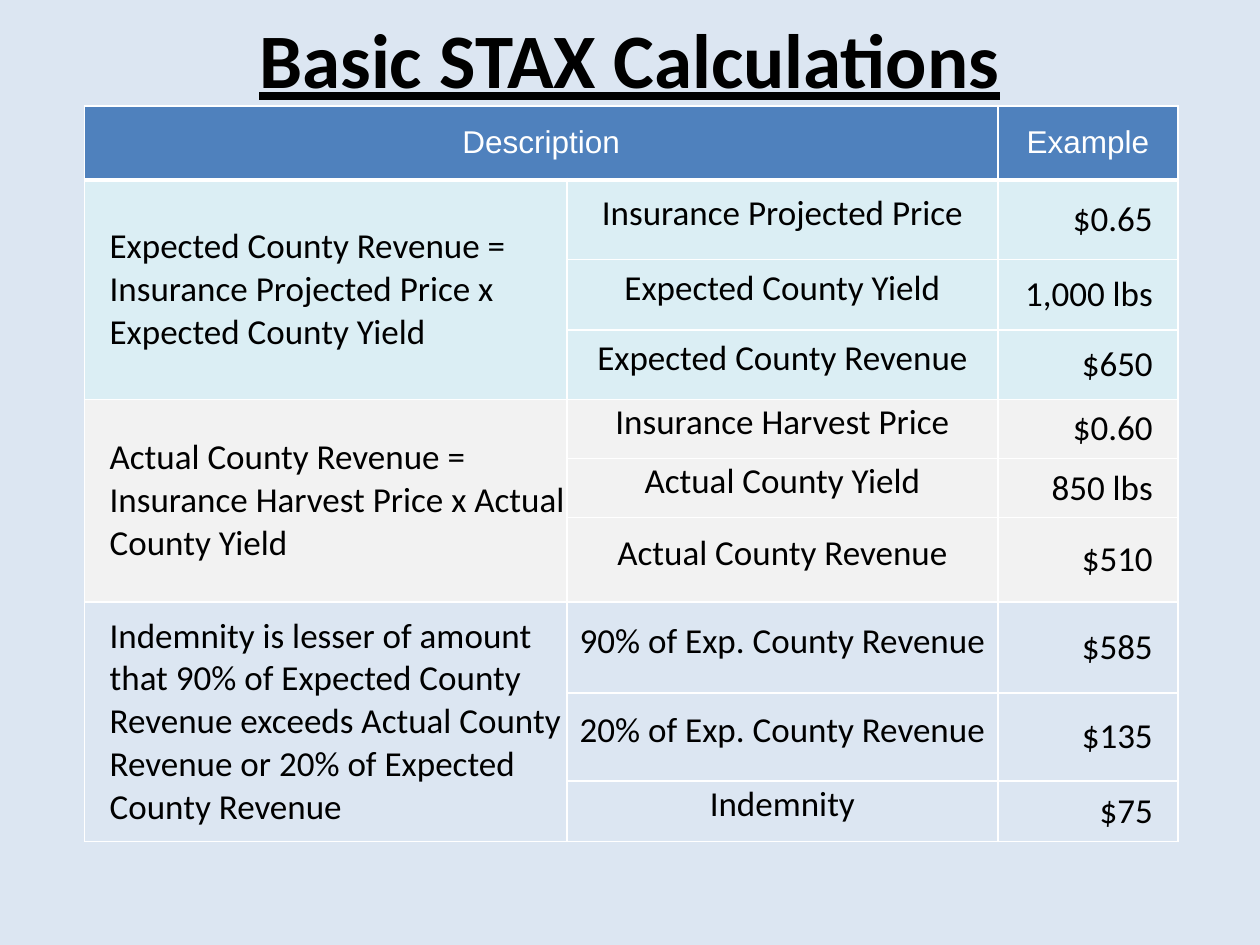
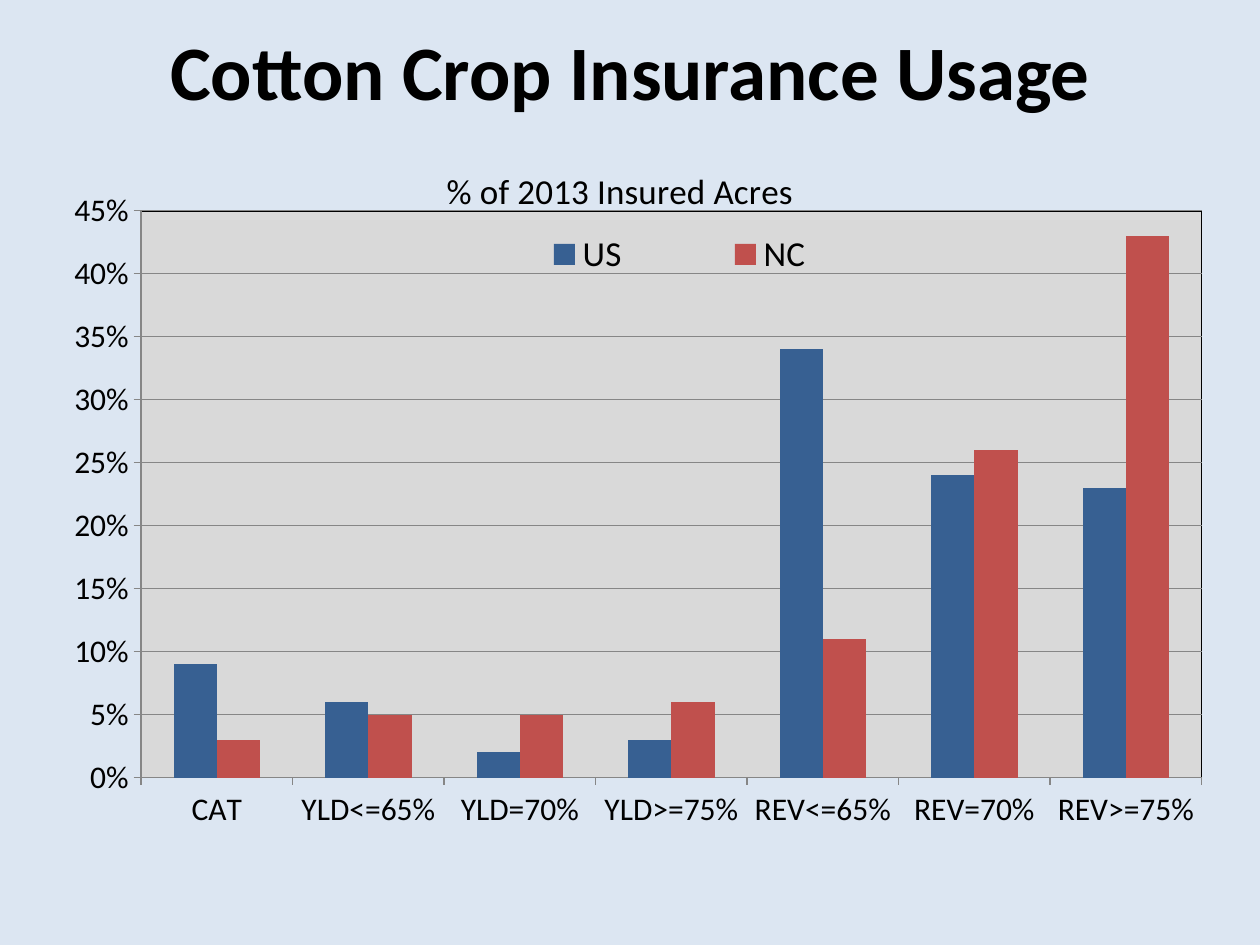
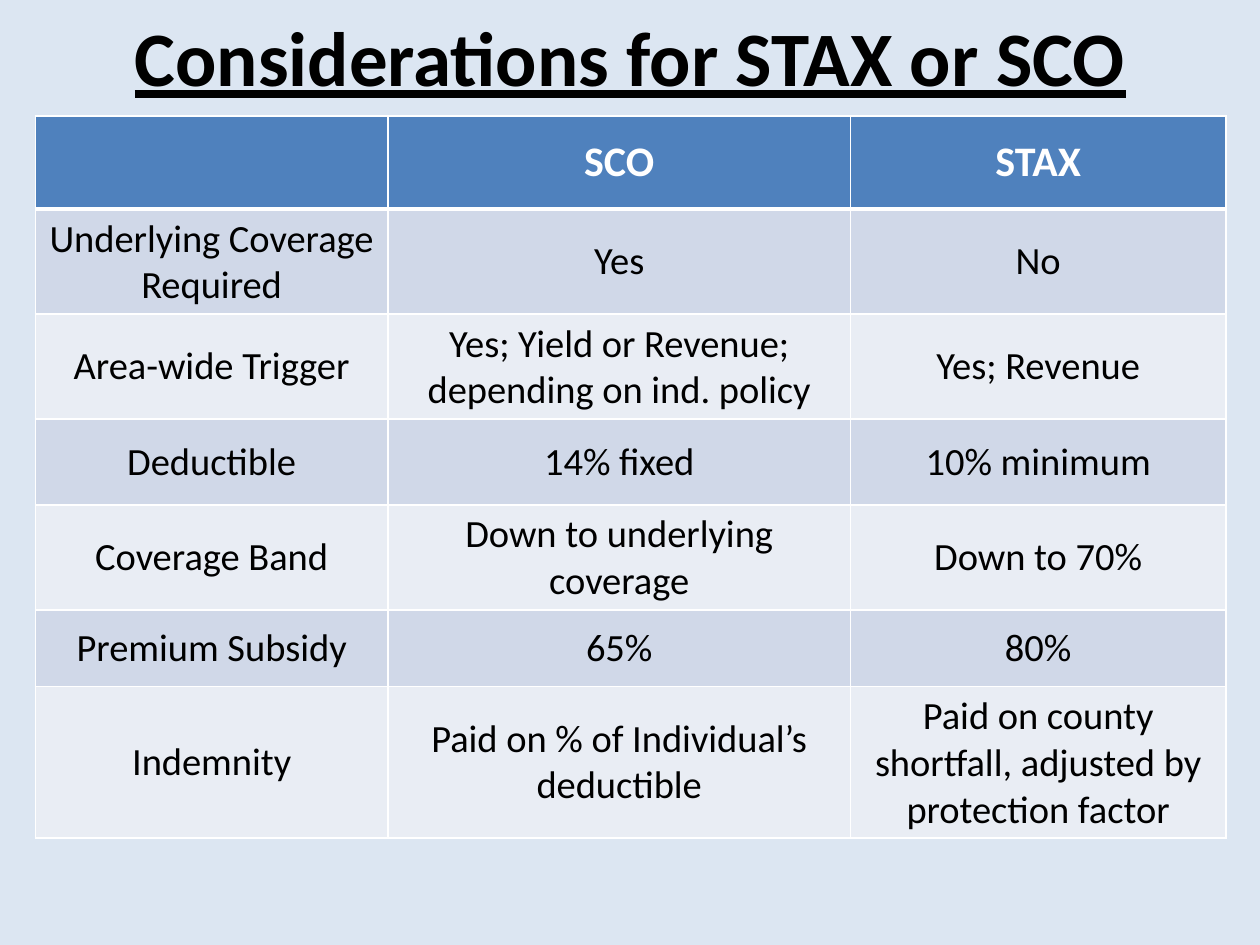
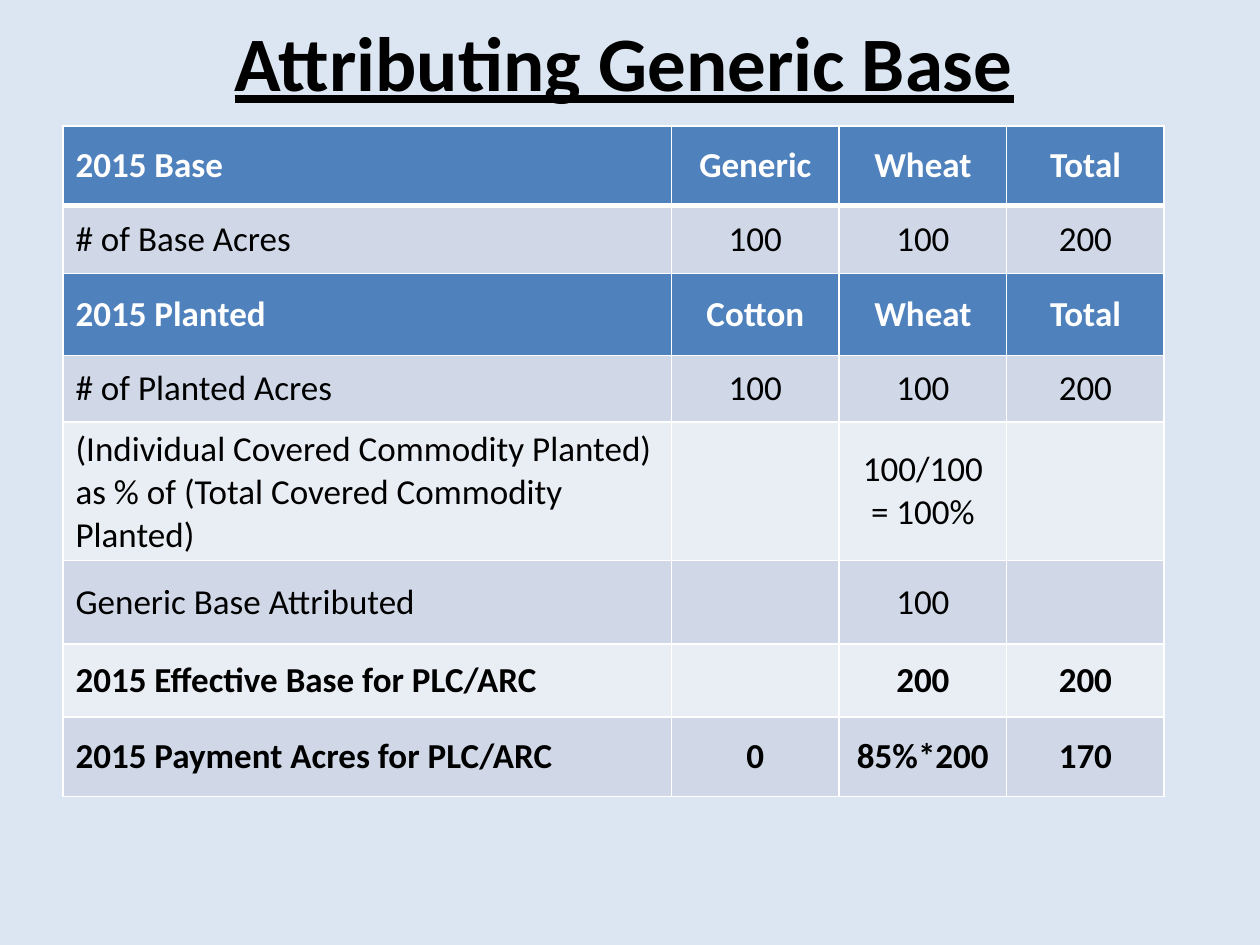
import pptx
import pptx.chart.data
import pptx.dml.color
import pptx.enum.chart
import pptx.enum.text
import pptx.oxml
import pptx.oxml.ns
import pptx.util
from pptx.util import Inches, Pt

RGBColor = pptx.dml.color.RGBColor
PP_ALIGN = pptx.enum.text.PP_ALIGN
MSO_ANCHOR = pptx.enum.text.MSO_ANCHOR
qn = pptx.oxml.ns.qn
nsdecls = pptx.oxml.ns.nsdecls

BACKGROUND = RGBColor(0xDC, 0xE6, 0xF2)
HEADER = RGBColor(0x4F, 0x81, 0xBD)
BAND_DARK = RGBColor(0xD0, 0xD8, 0xE8)
BAND_LIGHT = RGBColor(0xE9, 0xED, 0xF4)
AQUA = RGBColor(0xDB, 0xEE, 0xF4)
PALE_GRAY = RGBColor(0xF2, 0xF2, 0xF2)
PLOT_GRAY = RGBColor(0xD9, 0xD9, 0xD9)
GRID_GRAY = RGBColor(0x86, 0x86, 0x86)
US_BLUE = RGBColor(0x37, 0x60, 0x92)
NC_RED = RGBColor(0xC0, 0x50, 0x4D)
BLACK = RGBColor(0, 0, 0)
WHITE = RGBColor(0xFF, 0xFF, 0xFF)
FONT = "Calibri"

prs = pptx.Presentation()
prs.slide_width = Inches(10)
prs.slide_height = Inches(7.5)


def add_slide(title, left, top, width, height, underline=True):
    s = prs.slides.add_slide(prs.slide_layouts[6])
    s.background.fill.solid()
    s.background.fill.fore_color.rgb = BACKGROUND
    sp = s.shapes.add_textbox(Inches(left), Inches(top), Inches(width), Inches(height))
    tf = sp.text_frame
    tf.word_wrap = True
    tf.vertical_anchor = MSO_ANCHOR.MIDDLE
    p = tf.paragraphs[0]
    p.text = title
    p.alignment = PP_ALIGN.CENTER
    p.font.name = FONT
    p.font.size = Pt(44)
    p.font.bold = True
    p.font.underline = underline
    p.font.color.rgb = BLACK
    return s


def add_grid(s, left, top, widths, heights, texts, size, header_size, header_rows=(0,), bold_rows=()):
    frame = s.shapes.add_table(len(heights), len(widths), Inches(left), Inches(top),
                               Inches(sum(widths)), Inches(sum(heights)))
    table = frame.table
    for column, width in zip(table.columns, widths):
        column.width = Inches(width)
    for i, height in enumerate(heights):
        table.rows[i].height = Inches(height)
        is_header = i in header_rows
        for j, text in enumerate(texts[i]):
            cell = table.cell(i, j)
            cell.text = text
            cell.vertical_anchor = MSO_ANCHOR.MIDDLE
            for side in ("lnL", "lnR", "lnT", "lnB"):
                thick = (i, side) in ((0, "lnB"), (1, "lnT"))
                cell._tc.get_or_add_tcPr().append(pptx.oxml.parse_xml(
                    f'<a:{side} {nsdecls("a")} w="{Pt(3 if thick else 1)}"><a:solidFill>'
                    f'<a:srgbClr val="{WHITE}"/></a:solidFill></a:{side}>'))
            cell.fill.solid()
            cell.fill.fore_color.rgb = HEADER if is_header else BAND_DARK if i % 2 else BAND_LIGHT
            for p in cell.text_frame.paragraphs:
                p.alignment = PP_ALIGN.CENTER
                p.font.name = FONT
                p.font.size = Pt(header_size if is_header else size)
                p.font.bold = is_header or i in bold_rows
                p.font.color.rgb = WHITE if is_header else BLACK
    return table


s = add_slide("Basic STAX Calculations", 0, 0.08, 10, 0.75)
calculations = [
    ("Description", "", "Example"),
    ("Expected County Revenue = Insurance Projected Price x Expected County Yield",
     "Insurance Projected Price", "$0.65"),
    ("", "Expected County Yield", "1,000 lbs"),
    ("", "Expected County Revenue", "$650"),
    ("Actual County Revenue = Insurance Harvest Price x Actual County Yield",
     "Insurance Harvest Price", "$0.60"),
    ("", "Actual County Yield", "850 lbs"),
    ("", "Actual County Revenue", "$510"),
    ("Indemnity is lesser of amount that 90% of Expected County Revenue exceeds "
     "Actual County Revenue or 20% of Expected County Revenue",
     "90% of Exp. County Revenue", "$585"),
    ("", "20% of Exp. County Revenue", "$135"),
    ("", "Indemnity", "$75"),
]
table = add_grid(s, 0.67, 0.84, (3.83, 3.42, 1.43),
                 (0.59, 0.63, 0.56, 0.55, 0.47, 0.47, 0.67, 0.72, 0.7, 0.48),
                 calculations, 20, 18)
for j in range(3):
    p = table.cell(0, j).text_frame.paragraphs[0]
    p.font.name = "Arial"
    p.font.bold = False
example = table.cell(0, 2)
example.margin_left = example.margin_right = example.margin_top = example.margin_bottom = 0
column_styles = [
    (PP_ALIGN.LEFT, 0.2, 0, 0),
    (PP_ALIGN.CENTER, 0, 0, 0.1),
    (PP_ALIGN.RIGHT, 0, 0.2, 0),
]
group_fills = (AQUA, PALE_GRAY, BACKGROUND)
for i in range(1, 10):
    for j, (align, left, right, bottom) in enumerate(column_styles):
        cell = table.cell(i, j)
        cell.fill.fore_color.rgb = group_fills[(i - 1) // 3]
        cell.margin_left = Inches(left)
        cell.margin_right = Inches(right)
        cell.margin_top = 0
        cell.margin_bottom = Inches(bottom)
        cell.text_frame.paragraphs[0].alignment = align
table.cell(0, 0).merge(table.cell(0, 1))
for i in (1, 4, 7):
    table.cell(i, 0).merge(table.cell(i + 2, 0))

s = add_slide("Cotton Crop Insurance Usage", 0.17, 0.08, 9.67, 0.95, underline=False)
data = pptx.chart.data.CategoryChartData(number_format="0%")
data.categories = ["CAT", "YLD<=65%", "YLD=70%", "YLD>=75%", "REV<=65%", "REV=70%", "REV>=75%"]
data.add_series("US", (0.09, 0.06, 0.02, 0.03, 0.34, 0.24, 0.23))
data.add_series("NC", (0.03, 0.05, 0.05, 0.06, 0.11, 0.26, 0.43))
chart = s.shapes.add_chart(pptx.enum.chart.XL_CHART_TYPE.COLUMN_CLUSTERED, Inches(0.17), Inches(1.03),
                           Inches(9.5), Inches(6), data).chart
chart.font.name = FONT
chart.font.size = Pt(18)
chart.font.color.rgb = BLACK

chart.has_title = True
p = chart.chart_title.text_frame.paragraphs[0]
p.text = "% of 2013 Insured Acres"
p.font.name = FONT
p.font.size = Pt(20)
p.font.bold = False
p.font.color.rgb = BLACK
chart.chart_title.include_in_layout = True

chart.has_legend = True
chart.legend.position = pptx.enum.chart.XL_LEGEND_POSITION.RIGHT
chart.legend.include_in_layout = False
chart.legend.font.name = FONT
chart.legend.font.size = Pt(20)
chart.legend.font.color.rgb = BLACK

plot = chart.plots[0]
plot.gap_width = 150
plot.overlap = 0
plot.vary_by_categories = False
for series, color in zip(plot.series, (US_BLUE, NC_RED)):
    series.format.fill.solid()
    series.format.fill.fore_color.rgb = color

value_axis = chart.value_axis
value_axis.minimum_scale = 0
value_axis.maximum_scale = 0.45
value_axis.major_unit = 0.05
value_axis.tick_labels.number_format = "0%"
value_axis.tick_labels.number_format_is_linked = False
value_axis.major_gridlines.format.line.color.rgb = GRID_GRAY
for axis in (chart.category_axis, value_axis):
    axis.major_tick_mark = pptx.enum.chart.XL_TICK_MARK.OUTSIDE
    axis.tick_labels.font.size = Pt(18)
    axis.format.line.color.rgb = GRID_GRAY

plot_area = chart._chartSpace.find(".//" + qn("c:plotArea"))
layouts = [
    (chart.chart_title._element, 1, "", {"x": 0.35, "y": 0.04}),
    (chart.legend._element, 1, "", {"x": 0.36, "y": 0.13, "w": 0.38, "h": 0.07}),
    (plot_area, 0, '<c:layoutTarget val="inner"/>', {"x": 0.1, "y": 0.107, "w": 0.886, "h": 0.75}),
]
for element, index, target, place in layouts:
    for layout in element.findall(qn("c:layout")):
        element.remove(layout)
    modes = "".join(f'<c:{key}Mode val="edge"/>' for key in "xy")
    values = "".join(f'<c:{key} val="{value}"/>' for key, value in place.items())
    element.insert(index, pptx.oxml.parse_xml(
        f'<c:layout {nsdecls("c")}><c:manualLayout>{target}{modes}{values}</c:manualLayout></c:layout>'))
plot_area.append(pptx.oxml.parse_xml(
    f'<c:spPr {nsdecls("c", "a")}><a:solidFill><a:srgbClr val="{PLOT_GRAY}"/></a:solidFill>'
    f'<a:ln w="{Pt(1)}"><a:solidFill><a:srgbClr val="{BLACK}"/></a:solidFill></a:ln></c:spPr>'))

s = add_slide("Considerations for STAX or SCO", 0.28, 0, 9.45, 0.88)
considerations = [
    ("", "SCO", "STAX"),
    ("Underlying Coverage Required", "Yes", "No"),
    ("Area-wide Trigger", "Yes; Yield or Revenue; depending on ind. policy", "Yes; Revenue"),
    ("Deductible", "14% fixed", "10% minimum"),
    ("Coverage Band", "Down to underlying coverage", "Down to 70%"),
    ("Premium Subsidy", "65%", "80%"),
    ("Indemnity", "Paid on % of Individual’s deductible",
     "Paid on county shortfall, adjusted by protection factor"),
]
add_grid(s, 0.28, 0.92, (2.8, 3.67, 2.98), (0.74, 0.74, 0.74, 0.68, 0.74, 0.61, 0.74),
         considerations, 22, 24)

s = add_slide("Attributing Generic Base", 0.01, 0.04, 9.89, 0.88)
base_acres = [
    ("2015 Base", "Generic", "Wheat", "Total"),
    ("# of Base Acres", "100", "100", "200"),
    ("2015 Planted", "Cotton", "Wheat", "Total"),
    ("# of Planted Acres", "100", "100", "200"),
    ("(Individual Covered Commodity Planted) as % of (Total Covered Commodity Planted)",
     "", "100/100\n= 100%", ""),
    ("Generic Base Attributed", "", "100", ""),
    ("2015 Effective Base for PLC/ARC", "", "200", "200"),
    ("2015 Payment Acres for PLC/ARC", "0", "85%*200", "170"),
]
table = add_grid(s, 0.5, 1, (4.83, 1.33, 1.33, 1.25), (0.63, 0.54, 0.65, 0.53, 0.83, 0.66, 0.58, 0.63),
                 base_acres, 20, 20, header_rows=(0, 2), bold_rows=(6, 7))
for i in range(len(base_acres)):
    table.cell(i, 0).text_frame.paragraphs[0].alignment = PP_ALIGN.LEFT

prs.save("out.pptx")
